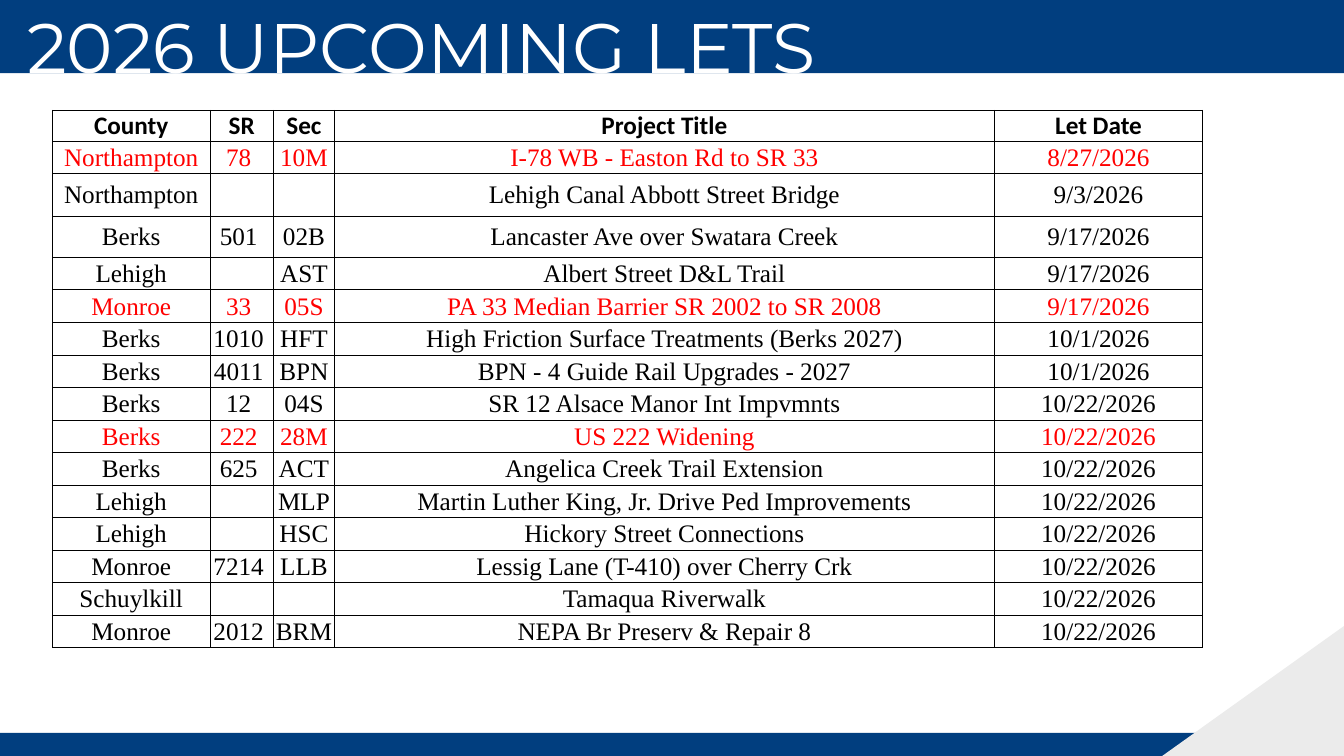
"""Build the slide that lists the upcoming 2026 lets."""
from dataclasses import dataclass

from lxml.etree import SubElement
from pptx import Presentation
from pptx.dml.color import RGBColor
from pptx.enum.shapes import MSO_SHAPE
from pptx.enum.text import MSO_ANCHOR, MSO_AUTO_SIZE, PP_ALIGN
from pptx.oxml.ns import qn
from pptx.util import Pt


@dataclass(frozen=True)
class Theme:
    navy: str = "013E7F"
    gray: str = "EBEBEB"
    white: str = "FFFFFF"
    black: str = "000000"
    red: str = "FF0000"
    display: str = "Montserrat"
    head: str = "Calibri"
    body: str = "Times New Roman"
    large: float = 50
    small: float = 18
    rule: float = 0.5


class Deck:
    def __init__(self, theme, width, height):
        self.theme = theme
        self.file = Presentation()
        self.file.slide_width, self.file.slide_height = Pt(width), Pt(height)
        self.slide = self.file.slides.add_slide(self.file.slide_layouts[5])

    def style(self, para, font, size, color, bold=False):
        for run in para.runs:
            run.font.name, run.font.size, run.font.bold = font, Pt(size), bold
            run.font.color.rgb = RGBColor.from_string(color)

    def shape(self, kind, box, color, flip=False):
        shape = self.slide.shapes.add_shape(kind, *map(Pt, box))
        shape.shadow.inherit = False
        shape.fill.solid()
        shape.fill.fore_color.rgb = RGBColor.from_string(color)
        shape.line.fill.background()
        if flip:
            shape.element.spPr.xfrm.set("flipH", "1")

    def title(self, text, box):
        title = self.slide.shapes.title
        title.left, title.top, title.width, title.height = map(Pt, box)
        frame = title.text_frame
        frame.text = text
        frame.word_wrap = True
        frame.auto_size = MSO_AUTO_SIZE.NONE
        frame.vertical_anchor = MSO_ANCHOR.BOTTOM
        para = frame.paragraphs[0]
        para.alignment = PP_ALIGN.LEFT
        para.line_spacing = 0.8
        para.space_before = Pt(0)
        self.style(para, self.theme.display, self.theme.large, self.theme.white)
        title.element.getparent().append(title.element)

    def border(self, cell):
        props = cell._tc.get_or_add_tcPr()
        for spot, side in enumerate(("lnL", "lnR", "lnT", "lnB")):
            line = SubElement(props, qn(f"a:{side}"), w=str(Pt(self.theme.rule)))
            fill = SubElement(line, qn("a:solidFill"))
            SubElement(fill, qn("a:srgbClr"), val=self.theme.black)
            props.insert(spot, line)

    def cell(self, cell, text, font, color, bold, inset):
        cell.margin_left = cell.margin_right = cell.margin_top = Pt(inset)
        cell.margin_bottom = Pt(0)
        cell.vertical_anchor = MSO_ANCHOR.MIDDLE
        cell.fill.background()
        self.border(cell)
        cell.text_frame.text = text
        para = cell.text_frame.paragraphs[0]
        para.alignment = PP_ALIGN.CENTER
        self.style(para, font, self.theme.small, color, bold)

    def table(self, rows, spot, widths, heights, urgent):
        size = sum(widths), sum(heights)
        frame = self.slide.shapes.add_table(
            len(rows), len(widths), *map(Pt, (*spot, *size)))
        table = frame.table
        table.first_row = table.horz_banding = False
        for col, width in zip(table.columns, widths):
            col.width = Pt(width)
        for r, (row, height) in enumerate(zip(rows, heights)):
            table.rows[r].height = Pt(height)
            head = r == 0
            font = self.theme.head if head else self.theme.body
            color = self.theme.red if r in urgent else self.theme.black
            for c, text in enumerate(row):
                self.cell(table.cell(r, c), text, font, color, head,
                          0 if head else 0.7)


LETS = [
    ("County", "SR", "Sec", "Project Title", "Let Date"),
    ("Northampton", "78 ", "10M", "I-78 WB - Easton Rd to SR 33", "8/27/2026"),
    ("Northampton", "", "", "Lehigh Canal Abbott Street Bridge", "9/3/2026"),
    ("Berks", "501 ", "02B", "Lancaster Ave over Swatara Creek", "9/17/2026"),
    ("Lehigh", "", "AST", "Albert Street D&L Trail", "9/17/2026"),
    ("Monroe", "33 ", "05S", "PA 33 Median Barrier SR 2002 to SR 2008", "9/17/2026"),
    ("Berks", "1010 ", "HFT", "High Friction Surface Treatments (Berks 2027)", "10/1/2026"),
    ("Berks", "4011 ", "BPN", "BPN - 4 Guide Rail Upgrades - 2027", "10/1/2026"),
    ("Berks", "12 ", "04S", "SR 12 Alsace Manor Int Impvmnts", "10/22/2026"),
    ("Berks", "222 ", "28M", "US 222 Widening", "10/22/2026"),
    ("Berks", "625 ", "ACT", "Angelica Creek Trail Extension", "10/22/2026"),
    ("Lehigh", "", "MLP", "Martin Luther King, Jr. Drive Ped Improvements", "10/22/2026"),
    ("Lehigh", "", "HSC", "Hickory Street Connections", "10/22/2026"),
    ("Monroe", "7214 ", "LLB", "Lessig Lane (T-410) over Cherry Crk", "10/22/2026"),
    ("Schuylkill", "", "", "Tamaqua Riverwalk", "10/22/2026"),
    ("Monroe", "2012 ", "BRM", "NEPA Br Preserv & Repair 8", "10/22/2026"),
]
URGENT = {1, 5, 9}


def main():
    theme = Theme()
    wide, high = 960, 540
    deck = Deck(theme, wide, high)
    deck.shape(MSO_SHAPE.RECTANGLE, (0, 523.5, wide, 16.5), theme.navy)
    deck.shape(MSO_SHAPE.RIGHT_TRIANGLE, (830.2, 447.2, 129.8, 92.8),
               theme.gray, flip=True)
    deck.shape(MSO_SHAPE.RECTANGLE, (0, 0, wide, 52.3), theme.navy)
    widths = [112.7, 45.3, 43.5, 471.5, 148.7]
    heights = [22, 23.25, 30.4, 29.4] + [23.25] * (len(LETS) - 4)
    deck.table(LETS, (37.4, 78.7), widths, heights, URGENT)
    deck.title("2026 UPCOMING LETS", (12.2, 7.9, 933, 57.6))
    deck.file.save("out.pptx")


if __name__ == "__main__":
    main()
